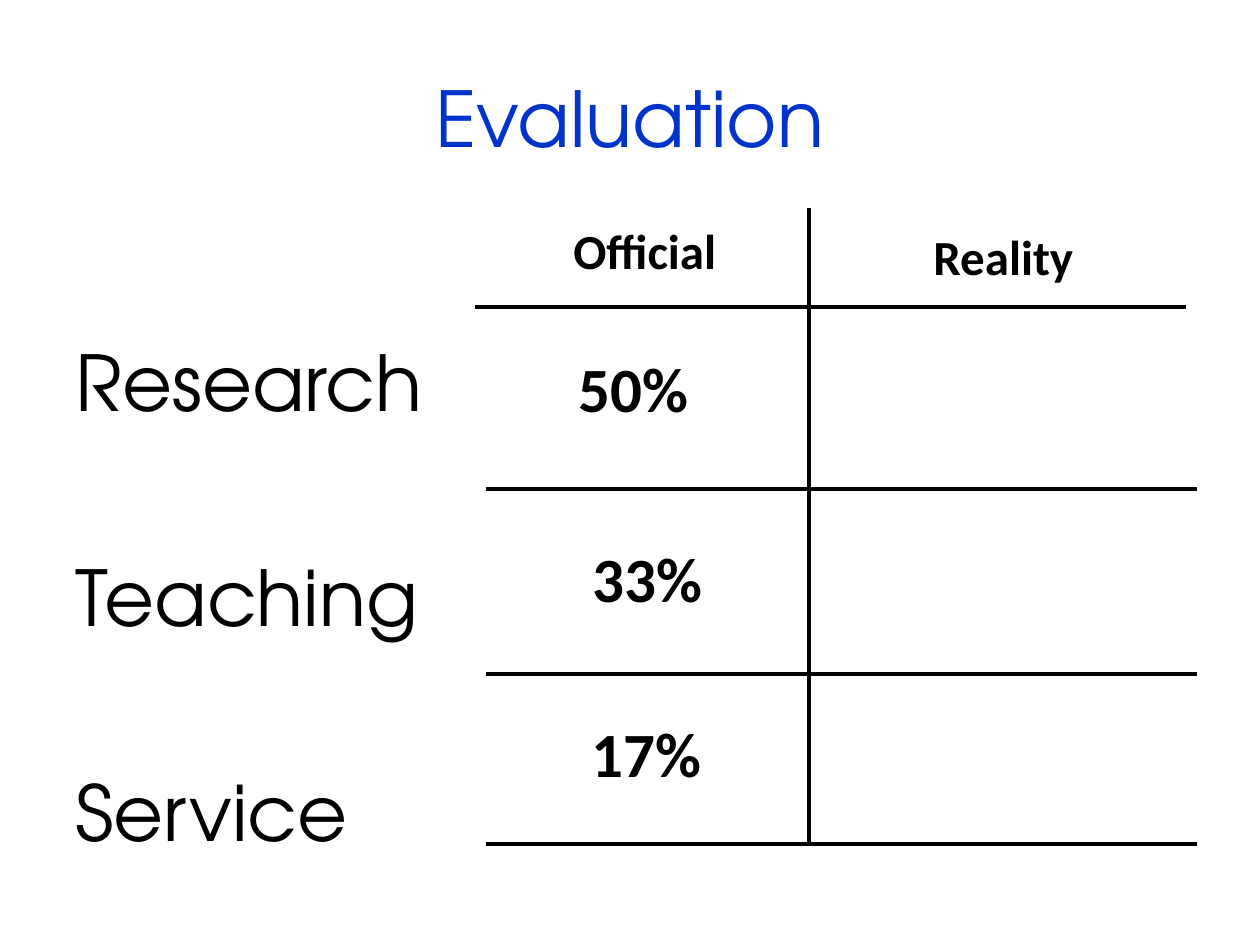
from lxml import etree
from pptx import Presentation
from pptx import util as u
from pptx.dml.color import RGBColor
from pptx.enum import shapes, text
from pptx.oxml import ns

PX = 914400 / 126


def px(*lengths):
    """Turn pixel lengths into EMU."""
    return [u.Emu(round(n * PX)) for n in lengths]


def add_run(paragraph, words, size, font, color="000000", bold=False):
    run = paragraph.add_run()
    run.text = words
    run.font.size = u.Pt(size)
    run.font.name = font
    run.font.bold = bold
    run.font.color.rgb = RGBColor.from_string(color)


prs = Presentation()
prs.slide_width, prs.slide_height = px(1260, 945)
slide = prs.slides.add_slide(prs.slide_layouts[1])
title, duties = slide.placeholders

# Title
title.left, title.top, title.width, title.height = px(63, 38, 1134, 158)
heading = title.text_frame
heading.auto_size = text.MSO_AUTO_SIZE.NONE
heading.vertical_anchor = text.MSO_ANCHOR.MIDDLE
heading.paragraphs[0].alignment = text.PP_ALIGN.CENTER
add_run(heading.paragraphs[0], "Evaluation", 44, "TeX Gyre Adventor", "0033CC")

# Row labels
duties.left, duties.top, duties.width, duties.height = px(63, 221, 1134, 624)
labels = duties.text_frame
labels.auto_size = text.MSO_AUTO_SIZE.NONE
labels.margin_top, = px(114)
for i, duty in enumerate(["Research", "Teaching", "Service"]):
    label = labels.add_paragraph() if i else labels.paragraphs[0]
    label.space_before = u.Pt(70 if i else 0)
    props = label._p.get_or_add_pPr()
    props.set("marL", "0")
    props.set("indent", "0")
    etree.SubElement(props, ns.qn("a:buNone"))
    add_run(label, duty, 44, "TeX Gyre Adventor")

# Grid: header rule, three row rules, column divider
rules = [(475, 307, 1186, 307)]
rules += [(486, y, 1197, y) for y in (489, 674, 844)]
rules += [(809, 208, 809, 844)]
for ends in rules:
    rule = slide.shapes.add_connector(shapes.MSO_CONNECTOR.STRAIGHT, *px(*ends))
    rule.line.color.rgb = RGBColor.from_string("000000")
    rule.line.width = u.Pt(2.25)
    etree.SubElement(rule._element.spPr, ns.qn("a:effectLst"))

# Column headings and official shares
entries = [
    ("Official", 28, 561, 214, 171, 72),
    ("Reality", 28, 921, 220, 168, 72),
    ("50%", 36, 566, 343, 136, 89),
    ("33%", 36, 580, 533, 136, 89),
    ("17%", 36, 579, 708, 136, 89),
]
for words, size, *place in entries:
    entry = slide.shapes.add_textbox(*px(*place)).text_frame
    entry.word_wrap = False
    entry.auto_size = text.MSO_AUTO_SIZE.SHAPE_TO_FIT_TEXT
    add_run(entry.paragraphs[0], words, size, "Calibri", bold=True)

prs.save("out.pptx")
